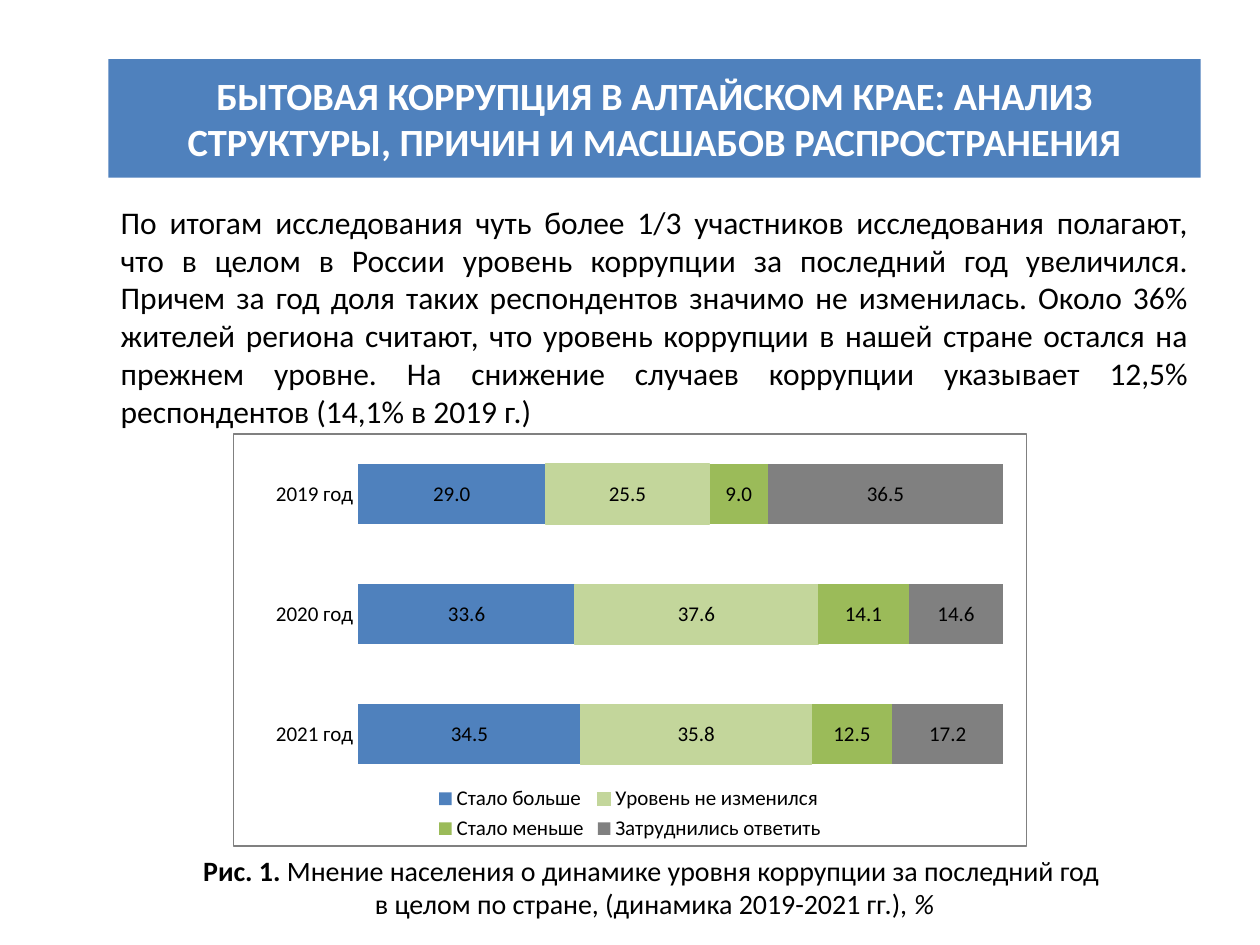
from lxml.etree import fromstring
from pptx import Presentation
from pptx.chart.data import CategoryChartData
from pptx.dml.color import RGBColor
from pptx.enum.chart import XL_CHART_TYPE, XL_LABEL_POSITION, XL_LEGEND_POSITION, XL_TICK_MARK
from pptx.enum.shapes import MSO_SHAPE
from pptx.enum.text import MSO_ANCHOR, PP_ALIGN
from pptx.util import Inches, Pt

WIDTH, HEIGHT = 10, 7.5
LEFT, SPAN = 0.86, 8.67
FONT = "Calibri"
BLUE, PALE, GREEN, GREY = "4F81BD", "C3D69B", "9BBB59", "808080"
BLACK, WHITE = "000000", "FFFFFF"
NS = ('xmlns:c="http://schemas.openxmlformats.org/drawingml/2006/chart" '
      'xmlns:a="http://schemas.openxmlformats.org/drawingml/2006/main"')

TITLE = "БЫТОВАЯ КОРРУПЦИЯ В АЛТАЙСКОМ КРАЕ: АНАЛИЗ СТРУКТУРЫ, ПРИЧИН И МАСШАБОВ РАСПРОСТРАНЕНИЯ"
BODY = ("По итогам исследования чуть более 1/3 участников исследования полагают, "
        "что в целом в России уровень коррупции за последний год увеличился. "
        "Причем за год доля таких респондентов значимо не изменилась. "
        "Около 36% жителей региона считают, что уровень коррупции в нашей стране "
        "остался на прежнем уровне. На снижение случаев коррупции указывает 12,5% "
        "респондентов (14,1% в 2019 г.)")
CAPTION = [
    [("Рис. 1. ", "b"), ("Мнение населения о динамике уровня коррупции за последний год ", "")],
    [("в целом по стране, (динамика 2019-2021 гг.), ", ""), ("%", "i")],
]
YEARS = ["2019 год", "2020 год", "2021 год"]
OPINIONS = [
    ("Стало больше", (29, 33.6, 34.5), BLUE),
    ("Уровень не изменился", (25.5, 37.6, 35.8), PALE),
    ("Стало меньше", (9, 14.1, 12.5), GREEN),
    ("Затруднились ответить", (36.5, 14.6, 17.2), GREY),
]


def rgb(value):
    """Turn a hex string into a colour."""
    return RGBColor.from_string(value)


def style_font(font, size, color=BLACK):
    """Set the typeface, size and colour of a font."""
    font.name, font.size = FONT, Pt(size)
    font.color.rgb = rgb(color)


def write(tf, paragraphs, size, color=BLACK, align=PP_ALIGN.CENTER, anchor=MSO_ANCHOR.MIDDLE):
    """Fill a text frame with paragraphs of (text, style) runs."""
    tf.word_wrap, tf.vertical_anchor = True, anchor
    for i, runs in enumerate(paragraphs):
        p = tf.add_paragraph() if i else tf.paragraphs[0]
        p.alignment = align
        for text, style in runs:
            r = p.add_run()
            r.text = text
            style_font(r.font, size, color)
            r.font.bold, r.font.italic = "b" in style, "i" in style


def add_banner(s, top, height):
    """Add the filled title bar."""
    sp = s.shapes.add_shape(MSO_SHAPE.RECTANGLE, Inches(LEFT), Inches(top), Inches(SPAN), Inches(height))
    sp.shadow.inherit = False
    sp.fill.solid()
    sp.fill.fore_color.rgb = rgb(BLUE)
    sp.line.fill.background()
    write(sp.text_frame, [[(TITLE, "b")]], 22, WHITE)


def add_text(s, top, height, paragraphs, size, **layout):
    """Add a text box over the content column."""
    box = s.shapes.add_textbox(Inches(LEFT), Inches(top), Inches(SPAN), Inches(height))
    write(box.text_frame, paragraphs, size, **layout)


def frame_chart(chart):
    """Give the chart a white ground, a grey border and a fixed plot area."""
    space = chart.element
    body = space.find("{*}chart")
    body.addnext(fromstring(
        f'<c:spPr {NS}><a:solidFill><a:srgbClr val="{WHITE}"/></a:solidFill><a:ln w="{Pt(0.75)}">'
        f'<a:solidFill><a:srgbClr val="{GREY}"/></a:solidFill></a:ln></c:spPr>'))
    plot_area = body.find("{*}plotArea")
    for old in plot_area.findall("{*}layout"):
        plot_area.remove(old)
    sizes = "".join(f'<c:{k} val="{v}"/>' for k, v in
                    (("x", 0.157), ("y", 0), ("w", 0.814), ("h", 0.875)))
    plot_area.insert(0, fromstring(
        f'<c:layout {NS}><c:manualLayout><c:layoutTarget val="inner"/><c:xMode val="edge"/>'
        f'<c:yMode val="edge"/>{sizes}</c:manualLayout></c:layout>'))


def style_series(series, color):
    """Colour one series and show its values."""
    series.format.fill.solid()
    series.format.fill.fore_color.rgb = rgb(color)
    if color == PALE:
        series.format.line.color.rgb = rgb(color)
        series.format.line.width = Pt(0.75)
    labels = series.data_labels
    labels.show_value = True
    labels.number_format, labels.number_format_is_linked = "0.0", False
    labels.position = XL_LABEL_POSITION.CENTER
    style_font(labels.font, 12)


def add_opinion_chart(s, left, top, width, height):
    """Add the stacked bars of opinions by year."""
    data = CategoryChartData(number_format="0.0")
    data.categories = YEARS
    for name, values, _ in OPINIONS:
        data.add_series(name, values)
    chart = s.shapes.add_chart(XL_CHART_TYPE.BAR_STACKED_100, Inches(left), Inches(top),
                               Inches(width), Inches(height), data).chart
    style_font(chart.font, 12)
    chart.has_title = False
    chart.has_legend = True
    chart.legend.position = XL_LEGEND_POSITION.BOTTOM
    chart.legend.include_in_layout = False
    style_font(chart.legend.font, 12)
    axis = chart.category_axis
    axis.reverse_order = True
    axis.major_tick_mark = axis.minor_tick_mark = XL_TICK_MARK.NONE
    axis.format.line.fill.background()
    style_font(axis.tick_labels.font, 12)
    chart.value_axis.has_major_gridlines = False
    chart.value_axis.visible = False
    plot = chart.plots[0]
    plot.gap_width, plot.overlap, plot.vary_by_categories = 100, 100, False
    for series, (_, _, color) in zip(plot.series, OPINIONS):
        style_series(series, color)
    frame_chart(chart)


def main():
    """Build and save the slide."""
    prs = Presentation()
    prs.slide_width, prs.slide_height = Inches(WIDTH), Inches(HEIGHT)
    s = prs.slides.add_slide(prs.slide_layouts[6])
    add_text(s, 1.56, 1.88, [[(BODY, "")]], 18, align=PP_ALIGN.JUSTIFY, anchor=MSO_ANCHOR.TOP)
    add_text(s, 6.72, 0.64, CAPTION, 16)
    add_banner(s, 0.47, 0.94)
    add_opinion_chart(s, 1.85, 3.44, 6.3, 3.28)
    prs.save("out.pptx")


if __name__ == "__main__":
    main()
